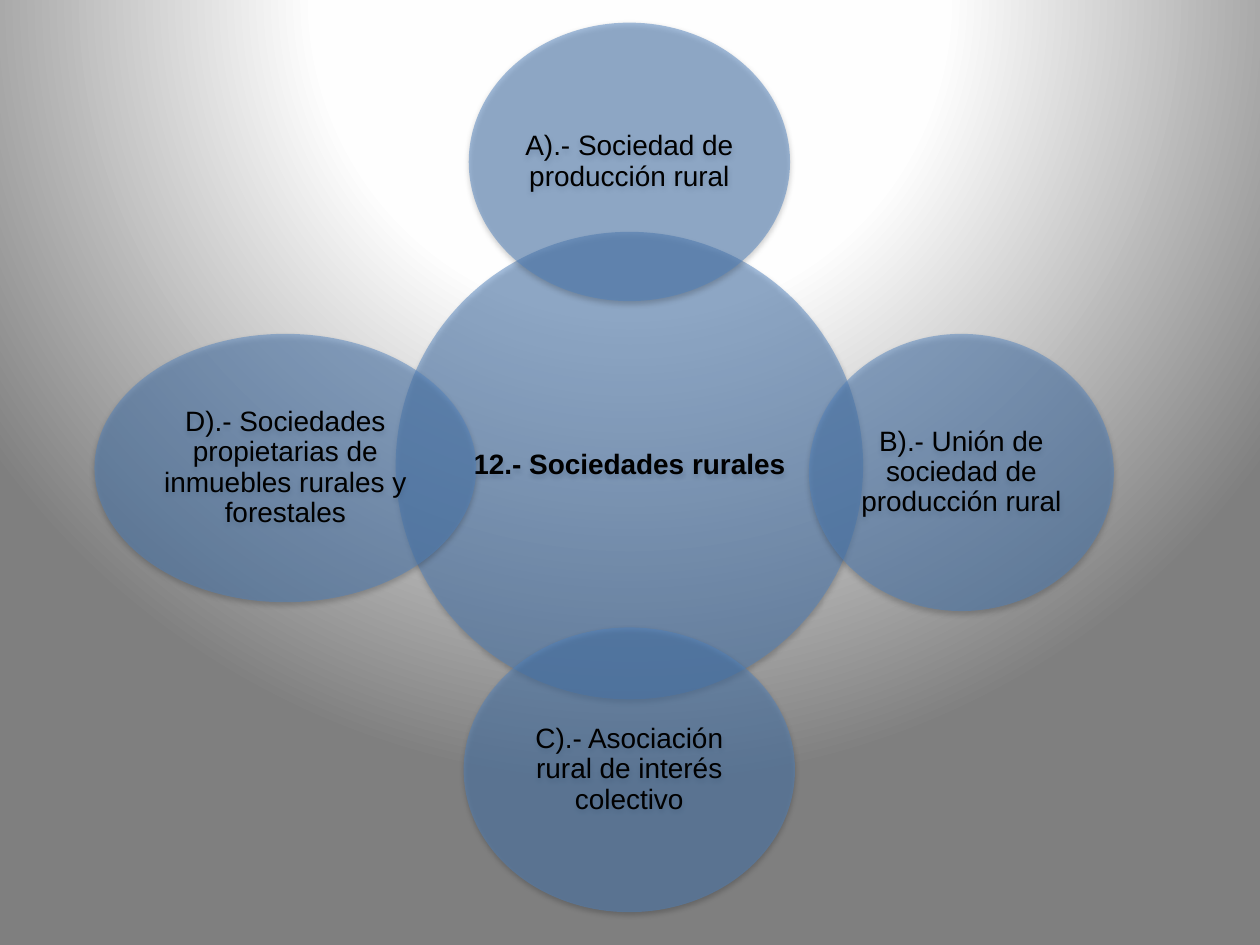
from pptx import Presentation
from pptx.dml.color import RGBColor
from pptx.enum import shapes, text
from pptx.oxml import parse_xml
from pptx.oxml.ns import nsdecls, qn
from pptx.util import Inches, Pt

BLUE = RGBColor(0x4F, 0x81, 0xBD)
BLACK = RGBColor(0, 0, 0)

BACKGROUND = f"""<a:gradFill {nsdecls('a')} rotWithShape="1"><a:gsLst>
<a:gs pos="0"><a:srgbClr val="FFFFFF"/></a:gs>
<a:gs pos="40000"><a:srgbClr val="FEFEFE"/></a:gs>
<a:gs pos="100000"><a:srgbClr val="7F7F7F"/></a:gs></a:gsLst>
<a:path path="circle"><a:fillToRect l="50000" t="-80000" r="50000" b="180000"/></a:path>
</a:gradFill>"""
ALPHA = f'<a:alpha {nsdecls("a")} val="50000"/>'
SHADOW = f"""<a:outerShdw {nsdecls('a')} blurRad="40000" dist="20000" dir="5400000"
rotWithShape="0"><a:srgbClr val="000000"><a:alpha val="38000"/></a:srgbClr></a:outerShdw>"""

# left, top, width, height, label; the hub comes first
CIRCLES = [
    (3.14, 1.84, 3.71, 3.71, "12.- Sociedades rurales"),
    (3.72, 0.18, 2.55, 2.21, "A).- Sociedad de producción rural"),
    (6.42, 2.65, 2.42, 2.2, "B).- Unión de sociedad de producción rural"),
    (3.68, 4.98, 2.63, 2.26, "C).- Asociación rural de interés colectivo"),
    (0.75, 2.65, 3.03, 2.13,
     "D).- Sociedades propietarias de inmuebles rurales y forestales"),
]

prs = Presentation()
prs.slide_width, prs.slide_height = Inches(10), Inches(7.5)
s = prs.slides.add_slide(prs.slide_layouts[6])

s.background.fill.solid()
bg = s.element.find(".//" + qn("p:bgPr"))
bg.replace(bg[0], parse_xml(BACKGROUND))

venn = s.shapes.add_group_shape()
for i, (left, top, width, height, label) in enumerate(CIRCLES):
    sp = venn.shapes.add_shape(shapes.MSO_SHAPE.OVAL, Inches(left), Inches(top),
                               Inches(width), Inches(height))
    sp.fill.solid()
    sp.fill.fore_color.rgb = BLUE
    sp.line.fill.background()
    sp.shadow.inherit = False
    props = sp.element.spPr
    props.find(".//" + qn("a:srgbClr")).append(parse_xml(ALPHA))
    props.find(qn("a:effectLst")).append(parse_xml(SHADOW))

    tf = sp.text_frame
    tf.word_wrap = True
    tf.vertical_anchor = text.MSO_ANCHOR.MIDDLE
    tf.margin_left = tf.margin_right = tf.margin_top = tf.margin_bottom = Inches(0.02)
    p = tf.paragraphs[0]
    p.text = label
    p.alignment = text.PP_ALIGN.CENTER
    p.line_spacing = 0.9
    p.font.name = "Arial"
    p.font.size = Pt(16)
    p.font.bold = i == 0
    p.font.color.rgb = BLACK

prs.save("out.pptx")
